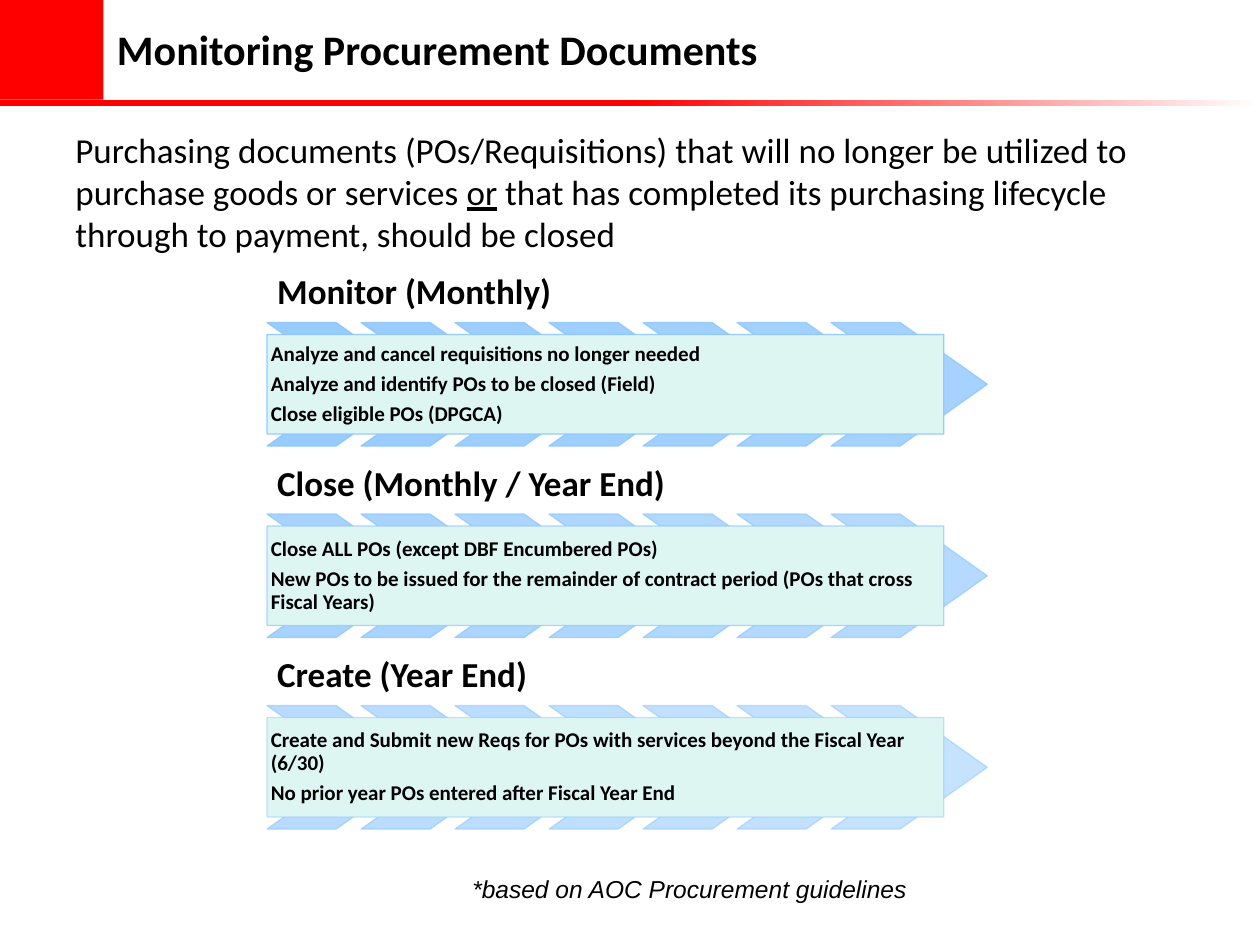
from lxml.etree import SubElement
from pptx import Presentation
from pptx.dml.color import RGBColor
from pptx.enum.shapes import MSO_SHAPE
from pptx.enum.text import MSO_ANCHOR
from pptx.oxml.ns import qn
from pptx.util import Inches, Pt

TITLE = "Monitoring Procurement Documents"
INTRO = [
    ("Purchasing documents (POs/Requisitions) that will no longer be utilized to "
     "purchase goods or services ", False),
    ("or", True),
    (" that has completed its purchasing lifecycle through to payment, should be closed", False),
]
STAGES = [
    ("Monitor (Monthly)", [
        "Analyze and cancel requisitions no longer needed",
        "Analyze and identify POs to be closed (Field)",
        "Close eligible POs (DPGCA)",
    ]),
    ("Close (Monthly / Year End)", [
        "Close ALL POs (except DBF Encumbered POs)",
        "New POs to be issued for the remainder of contract period (POs that cross Fiscal Years)",
    ]),
    ("Create (Year End)", [
        "Create and Submit new Reqs for POs with services beyond the Fiscal Year (6/30)",
        "No prior year POs entered after Fiscal Year End",
    ]),
]
FOOTNOTE = "*based on AOC Procurement guidelines"

RED, WHITE, BLACK, BLUE, MINT = "FF0000", "FFFFFF", "000000", "8DC6FF", "DEF6F1"
LEFT, TOP, STAGE_STEP = 2.12, 2.08, 1.52
HEADING_H = 0.48
CHEVRONS, CHEVRON_W, CHEVRON_H, CHEVRON_STEP = 7, 1.24, 0.98, 0.746
PANEL_W, PANEL_H = 5.37, 0.79


def rgb(color):
    return RGBColor.from_string(color)


def set_alpha(fill_parent, percent):
    """Make the solid fill directly under an spPr or ln element translucent."""
    color = fill_parent.find(qn("a:solidFill"))[0]
    SubElement(color, qn("a:alpha"), val=str(percent * 1000))


def add_shape(slide, kind, box, fill, line=None, fill_alpha=100, line_alpha=100):
    s = slide.shapes.add_shape(kind, *map(Inches, box))
    s.shadow.inherit = False
    s.fill.solid()
    s.fill.fore_color.rgb = rgb(fill)
    if fill_alpha < 100:
        set_alpha(s._element.spPr, fill_alpha)
    if line:
        s.line.color.rgb = rgb(line)
        s.line.width = Pt(0.75)
        set_alpha(s._element.spPr.find(qn("a:ln")), line_alpha)
    else:
        s.line.fill.background()
    return s


def add_text(slide, box, paragraphs, size, font="Calibri", bold=False, italic=False,
             anchor=MSO_ANCHOR.TOP, inset=None, spacing=None, gap=0, wrap=True):
    """Add a text box; each paragraph is a string or a list of (text, underlined)."""
    tb = slide.shapes.add_textbox(*map(Inches, box))
    tf = tb.text_frame
    tf.word_wrap = wrap
    tf.vertical_anchor = anchor
    if inset is not None:
        tf.margin_left = tf.margin_right = tf.margin_top = tf.margin_bottom = Inches(inset)
    for i, runs in enumerate(paragraphs):
        p = tf.add_paragraph() if i else tf.paragraphs[0]
        if spacing:
            p.line_spacing = spacing
        if gap:
            p.space_after = Pt(gap)
        for text, underlined in [(runs, False)] if isinstance(runs, str) else runs:
            r = p.add_run()
            r.text = text
            r.font.name, r.font.size = font, Pt(size)
            r.font.bold, r.font.italic = bold, italic
            r.font.underline = underlined
            r.font.color.rgb = rgb(BLACK)
    return tb


def add_header(slide):
    bar = add_shape(slide, MSO_SHAPE.RECTANGLE, (0, 0.79, 10, 0.05), RED)
    bar.fill.gradient()
    bar.fill.gradient_angle = 0
    for stop, (position, color) in zip(bar.fill.gradient_stops, [(0.5, RED), (1, WHITE)]):
        stop.position = position
        stop.color.rgb = rgb(color)
    add_shape(slide, MSO_SHAPE.RECTANGLE, (0, 0, 0.82, 0.79), RED)
    add_text(slide, (0.83, 0.03, 7.25, 0.72), [TITLE], 24, bold=True, anchor=MSO_ANCHOR.MIDDLE)


def add_stage(slide, row, heading, steps):
    top = TOP + row * STAGE_STEP
    add_text(slide, (LEFT, top, 5.3, HEADING_H), [heading], 20, bold=True,
             anchor=MSO_ANCHOR.BOTTOM, inset=0.08, spacing=0.9)
    chevron_top = top + HEADING_H
    for col in range(CHEVRONS):
        alpha = 90 - 2 * (row * CHEVRONS + col)
        box = (LEFT + col * CHEVRON_STEP, chevron_top, CHEVRON_W, CHEVRON_H)
        s = add_shape(slide, MSO_SHAPE.CHEVRON, box, BLUE, BLUE, alpha, alpha)
        s.adjustments[0] = 0.706
    panel = (LEFT, chevron_top + (CHEVRON_H - PANEL_H) / 2, PANEL_W, PANEL_H)
    add_shape(slide, MSO_SHAPE.RECTANGLE, panel, MINT, BLUE, line_alpha=90 - 20 * row)
    add_text(slide, panel, steps, 12, bold=True, anchor=MSO_ANCHOR.MIDDLE,
             inset=0.03, spacing=0.9, gap=4.2)


def main():
    prs = Presentation()
    prs.slide_width, prs.slide_height = Inches(10), Inches(7.5)
    slide = prs.slides.add_slide(prs.slide_layouts[6])
    add_header(slide)
    add_text(slide, (0.5, 0.97, 8.55, 1.48), [INTRO], 20)
    for row, (heading, steps) in enumerate(STAGES):
        add_stage(slide, row, heading, steps)
    add_text(slide, (3.65, 6.89, 3.67, 0.34), [FOOTNOTE], 14, font="Arial", italic=True, wrap=False)
    prs.save("out.pptx")


if __name__ == "__main__":
    main()
